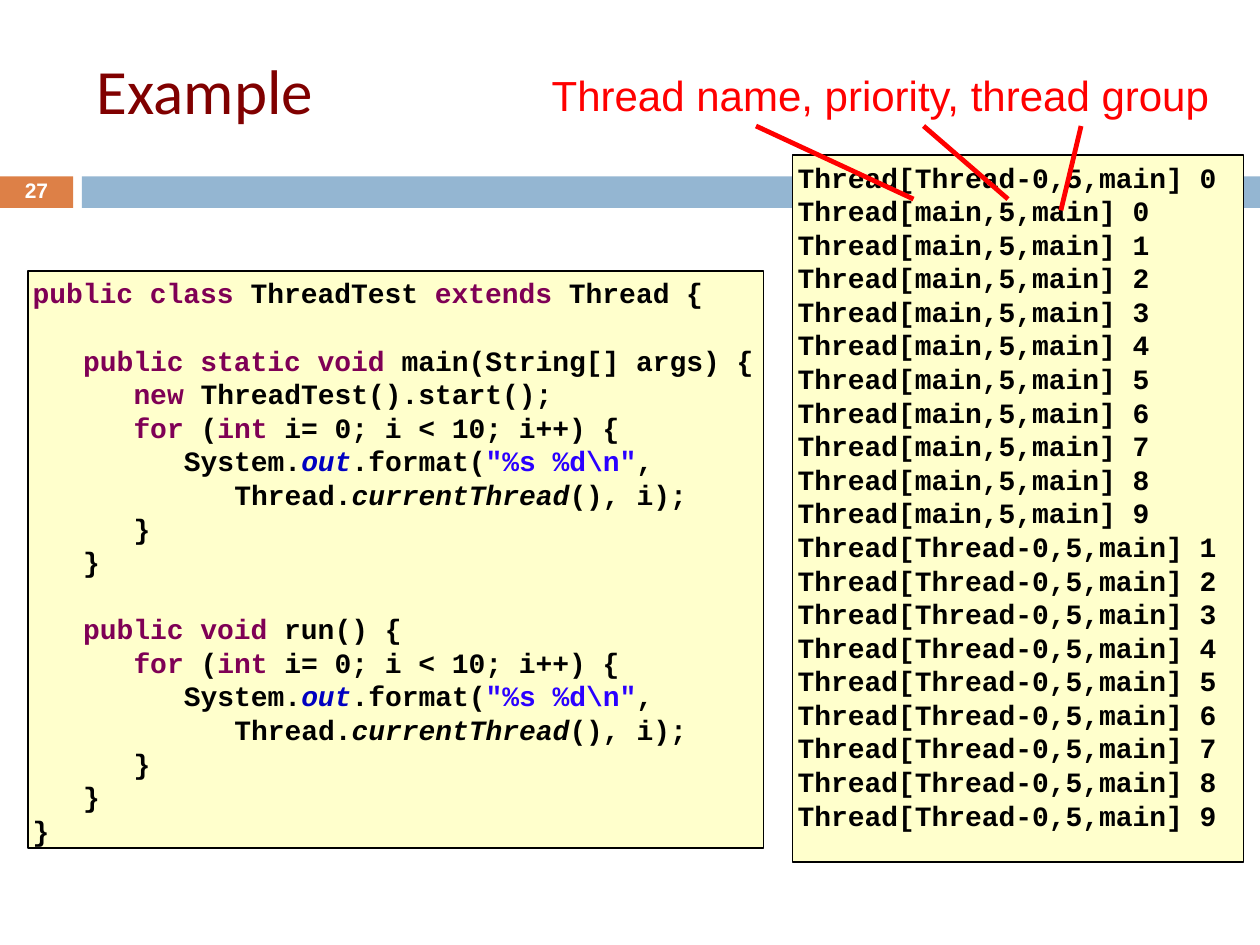
from dataclasses import dataclass

import pptx
import pptx.dml.color
import pptx.enum.shapes
import pptx.enum.text
import pptx.oxml.ns
import pptx.util
from lxml import etree

Inches, Pt = pptx.util.Inches, pptx.util.Pt
ANCHOR = pptx.enum.text.MSO_ANCHOR
ALIGN = pptx.enum.text.PP_ALIGN


@dataclass
class Theme:
    title_color: str = "800000"
    orange: str = "DD8047"
    blue: str = "94B6D2"
    cream: str = "FFFFCC"
    white: str = "FFFFFF"
    black: str = "000000"
    red: str = "FF0000"
    keyword: str = "7F0055"
    field: str = "0000C0"
    string: str = "2A00FF"
    heading_font: str = "Calibri"
    body_font: str = "Arial"
    code_font: str = "Courier New"
    title_size: int = 36
    note_size: int = 24
    code_size: int = 16
    number_size: int = 12
    code_pitch: float = 19.2   # points from one code line to the next
    code_indent: float = 0.4   # inches per level, three characters
    code_margin: float = 0.04


class SlideBuilder:
    def __init__(self, prs, theme):
        self.theme = theme
        self.s = prs.slides.add_slide(prs.slide_layouts[6])

    def rgb(self, color):
        return pptx.dml.color.RGBColor.from_string(color)

    def run(self, p, text, font, size, color, bold=False, italic=False):
        r = p.add_run()
        r.text = text
        r.font.name, r.font.size = font, Pt(size)
        r.font.bold, r.font.italic = bold, italic
        r.font.color.rgb = self.rgb(color)

    def rect(self, x, y, w, h, fill, line=None):
        sp = self.s.shapes.add_shape(
            pptx.enum.shapes.MSO_SHAPE.RECTANGLE,
            Inches(x), Inches(y), Inches(w), Inches(h))
        sp.shadow.inherit = False
        sp.fill.solid()
        sp.fill.fore_color.rgb = self.rgb(fill)
        if line:
            sp.line.color.rgb = self.rgb(line)
            sp.line.width = Pt(1)
        else:
            sp.line.fill.background()
        return sp

    def label(self, x, y, w, h, text, font, size, color, bold=False,
              align=ALIGN.LEFT, anchor=ANCHOR.TOP, spacing=1.0):
        sp = self.s.shapes.add_textbox(Inches(x), Inches(y), Inches(w), Inches(h))
        tf = sp.text_frame
        tf.word_wrap = True
        tf.vertical_anchor = anchor
        p = tf.paragraphs[0]
        p.alignment, p.line_spacing = align, spacing
        self.run(p, text, font, size, color, bold)

    def code_box(self, x, y, w, h, lines):
        """Each line is (indent level, blank lines above, styled runs)."""
        t = self.theme
        styles = {"plain": (t.black, False), "keyword": (t.keyword, False),
                  "field": (t.field, True), "string": (t.string, False),
                  "method": (t.black, True)}
        tf = self.rect(x, y, w, h, t.cream, t.black).text_frame
        tf.word_wrap = True
        tf.vertical_anchor = ANCHOR.TOP
        tf.margin_left = tf.margin_right = tf.margin_bottom = 0
        tf.margin_top = Inches(t.code_margin)
        for i, (level, gap, runs) in enumerate(lines):
            p = tf.paragraphs[0] if i == 0 else tf.add_paragraph()
            p.alignment = ALIGN.LEFT
            p.line_spacing = Pt(t.code_pitch)
            p.space_before = Pt(gap * t.code_pitch)
            margin = Inches(t.code_margin + level * t.code_indent)
            p._p.get_or_add_pPr().set("marL", str(margin))
            for text, style in runs:
                color, italic = styles[style]
                self.run(p, text, t.code_font, t.code_size, color, True, italic)

    def pointer(self, x1, y1, x2, y2):
        c = self.s.shapes.add_connector(
            pptx.enum.shapes.MSO_CONNECTOR.STRAIGHT,
            Inches(x1), Inches(y1), Inches(x2), Inches(y2))
        c.line.color.rgb = self.rgb(self.theme.red)
        c.line.width = Pt(2.75)
        etree.SubElement(c._element.spPr, pptx.oxml.ns.qn("a:effectLst"))


def plain(level, text):
    return level, 0, [(text, "plain")]


def print_loop():
    """The counting loop that both methods share."""
    return [
        (2, 0, [("for", "keyword"), (" (", "plain"), ("int", "keyword"),
                (" i= 0; i < 10; i++) {", "plain")]),
        (3, 0, [("System.", "plain"), ("out", "field"), (".format(", "plain"),
                ('"%s %d\\n"', "string"), (",", "plain")]),
        (4, 0, [("Thread.", "plain"), ("currentThread", "method"),
                ("(), i);", "plain")]),
        plain(2, "}"),
        plain(1, "}"),
    ]


def main():
    prs = pptx.Presentation()
    prs.slide_width, prs.slide_height = Inches(10), Inches(7.5)
    t = Theme()
    b = SlideBuilder(prs, t)

    # Header band, title and slide number
    b.rect(0, 1.4, 0.58, 0.25, t.orange)
    b.rect(0.65, 1.4, 9.35, 0.25, t.blue)
    b.label(0.67, 0.25, 2.83, 0.92, "Example", t.heading_font, t.title_size,
            t.title_color, anchor=ANCHOR.MIDDLE)
    b.label(0, 1.39, 0.58, 0.27, "27", t.body_font, t.number_size, t.white,
            bold=True, align=ALIGN.CENTER, anchor=ANCHOR.MIDDLE, spacing=0.8)

    # Program output
    order = ([("Thread-0", 0)] + [("main", n) for n in range(10)]
             + [("Thread-0", n) for n in range(1, 10)])
    b.code_box(6.29, 1.23, 3.58, 5.61,
               [plain(0, f"Thread[{name},5,main] {n}") for name, n in order])

    # Program source
    source = [
        (0, 0, [("public class", "keyword"), (" ThreadTest ", "plain"),
                ("extends", "keyword"), (" Thread {", "plain")]),
        (1, 1, [("public static void", "keyword"),
                (" main(String[] args) {", "plain")]),
        (2, 0, [("new", "keyword"), (" ThreadTest().start();", "plain")]),
        *print_loop(),
        (1, 1, [("public void", "keyword"), (" run() {", "plain")]),
        *print_loop(),
        plain(0, "}"),
    ]
    b.code_box(0.22, 2.15, 5.84, 4.58, source)

    # Note with pointers to the parts of an output line
    b.label(4.28, 0.5, 5.47, 0.5, "Thread name, priority, thread group",
            t.body_font, t.note_size, t.red)
    for x1, x2, y2 in [(6, 7.25, 1.58), (7.33, 8, 1.58), (8.58, 8.42, 1.67)]:
        b.pointer(x1, 1, x2, y2)

    prs.save("out.pptx")


if __name__ == "__main__":
    main()
